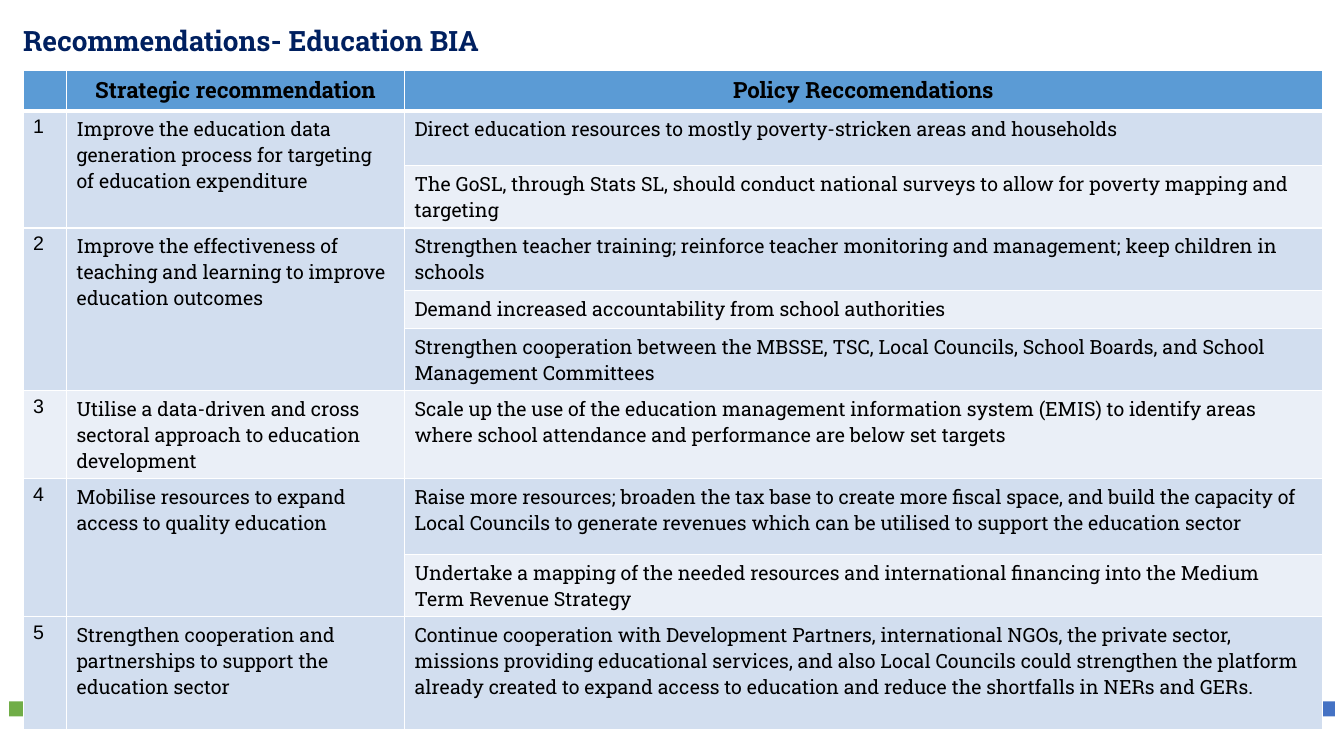
from lxml.etree import SubElement
from pptx import Presentation
from pptx.dml.color import RGBColor
from pptx.enum.shapes import MSO_SHAPE
from pptx.enum.text import MSO_ANCHOR, PP_ALIGN
from pptx.oxml.ns import qn
from pptx.util import Pt

SLAB, SANS = "Roboto Slab", "Arial"
BLACK, WHITE, NAVY = "000000", "FFFFFF", "002060"
HEADER_FILL, BAND_FILLS = "5B9BD5", ("D2DEEF", "EAEFF7")
FOOTER_COLORS = ("70AD47", "C5E0B4", "E7E6E6", "9CC2E5", "4472C4")

HEADINGS = ("", "Strategic recommendation", "Policy Reccomendations")
COLUMN_WIDTHS = (31, 241.5, 655.5)
ROW_HEIGHTS = (27.4, 39.2, 44.5, 44.5, 27.4, 44.5, 62.8, 54, 44.5, 80.8)

# Each strategic recommendation with its policy recommendations
RECOMMENDATIONS = (
    ("Improve the education data generation process for targeting of education expenditure", (
        "Direct education resources to mostly poverty-stricken areas and households",
        "The GoSL, through Stats SL, should conduct national surveys to allow for poverty "
        "mapping and targeting")),
    ("Improve the effectiveness of teaching and learning to improve education outcomes", (
        "Strengthen teacher training; reinforce teacher monitoring and management; keep "
        "children in schools",
        "Demand increased accountability from school authorities",
        "Strengthen cooperation between the MBSSE, TSC, Local Councils, School Boards, and "
        "School Management Committees")),
    ("Utilise a data-driven and cross sectoral approach to education development", (
        "Scale up the use of the education management information system (EMIS) to identify "
        "areas where school attendance and performance are below set targets",)),
    ("Mobilise resources to expand access to quality education", (
        "Raise more resources; broaden the tax base to create more fiscal space, and build the "
        "capacity of Local Councils to generate revenues which can be utilised to support the "
        "education sector",
        "Undertake a mapping of the needed resources and international financing into the "
        "Medium Term Revenue Strategy")),
    ("Strengthen cooperation and partnerships to support the education sector", (
        "Continue cooperation with Development Partners, international NGOs, the private "
        "sector, missions providing educational services, and also Local Councils could "
        "strengthen the platform already created to expand access to education and reduce the "
        "shortfalls in NERs and GERs.",)),
)


def color(hex_string):
    return RGBColor.from_string(hex_string)


def write(paragraph, text, size, font=SLAB, ink=BLACK, bold=False):
    paragraph.text = text
    paragraph.font.name = font
    paragraph.font.size = Pt(size)
    paragraph.font.bold = bold
    paragraph.font.color.rgb = color(ink)


def add_footer_strip(slide, left, top, width, height, gap=17):
    bar_width = (width - gap * (len(FOOTER_COLORS) - 1)) / len(FOOTER_COLORS)
    for i, bar_color in enumerate(FOOTER_COLORS):
        bar = slide.shapes.add_shape(
            MSO_SHAPE.RECTANGLE, Pt(left + i * (bar_width + gap)), Pt(top),
            Pt(bar_width), Pt(height))
        bar.shadow.inherit = False
        bar.fill.solid()
        bar.fill.fore_color.rgb = color(bar_color)
        bar.line.fill.background()


def add_title(slide, left, top, width, height):
    frame = slide.shapes.add_textbox(Pt(left), Pt(top), Pt(width), Pt(height)).text_frame
    frame.word_wrap = True
    frame.vertical_anchor = MSO_ANCHOR.MIDDLE
    frame.margin_left = frame.margin_right = frame.margin_top = frame.margin_bottom = 0
    title = frame.paragraphs[0]
    title.line_spacing = 0.9
    write(title, "Recommendations- Education BIA", 20, ink=NAVY, bold=True)


def style_cell(cell, fill, top_border=1, bottom_border=1):
    cell.fill.solid()
    cell.fill.fore_color.rgb = color(fill)
    properties = cell._tc.get_or_add_tcPr()
    borders = (("a:lnL", 1), ("a:lnR", 1), ("a:lnT", top_border), ("a:lnB", bottom_border))
    # Borders come before the fill in the cell properties
    for position, (side, weight) in enumerate(borders):
        border = properties.makeelement(qn(side), {"w": str(Pt(weight))})
        line_fill = SubElement(border, qn("a:solidFill"))
        SubElement(line_fill, qn("a:srgbClr"), val=WHITE)
        properties.insert(position, border)


def add_recommendations_table(slide, left, top, width, height):
    table = slide.shapes.add_table(
        len(ROW_HEIGHTS), len(COLUMN_WIDTHS), Pt(left), Pt(top), Pt(width), Pt(height)).table
    for column, column_width in zip(table.columns, COLUMN_WIDTHS):
        column.width = Pt(column_width)
    for row, row_height in zip(table.rows, ROW_HEIGHTS):
        row.height = Pt(row_height)

    # Header row
    for cell, heading in zip(table.rows[0].cells, HEADINGS):
        style_cell(cell, HEADER_FILL, bottom_border=3)
        if heading:
            paragraph = cell.text_frame.paragraphs[0]
            paragraph.alignment = PP_ALIGN.CENTER
            write(paragraph, heading, 16, bold=True)

    # Bands alternate from row to row
    for r in range(1, len(ROW_HEIGHTS)):
        for cell in table.rows[r].cells:
            style_cell(cell, BAND_FILLS[(r - 1) % 2], top_border=3 if r == 1 else 1)

    # Number and strategy span all rows of their policies
    first = 1
    for number, (strategy, policies) in enumerate(RECOMMENDATIONS, 1):
        last = first + len(policies) - 1
        if last > first:
            for c in (0, 1):
                table.cell(first, c).merge(table.cell(last, c))
        write(table.cell(first, 0).text_frame.paragraphs[0], str(number), 14, font=SANS)
        write(table.cell(first, 1).text_frame.paragraphs[0], strategy, 14)
        for r, policy in enumerate(policies, first):
            write(table.cell(r, 2).text_frame.paragraphs[0], policy, 14)
        first = last + 1


def main():
    presentation = Presentation()
    presentation.slide_width, presentation.slide_height = Pt(960), Pt(540)
    slide = presentation.slides.add_slide(presentation.slide_layouts[6])
    add_footer_strip(slide, 6.5, 501, 947, 10.8)
    add_title(slide, 16.5, 2, 807, 57)
    add_recommendations_table(slide, 16.5, 50.4, sum(COLUMN_WIDTHS), sum(ROW_HEIGHTS))
    presentation.save("out.pptx")


if __name__ == "__main__":
    main()
